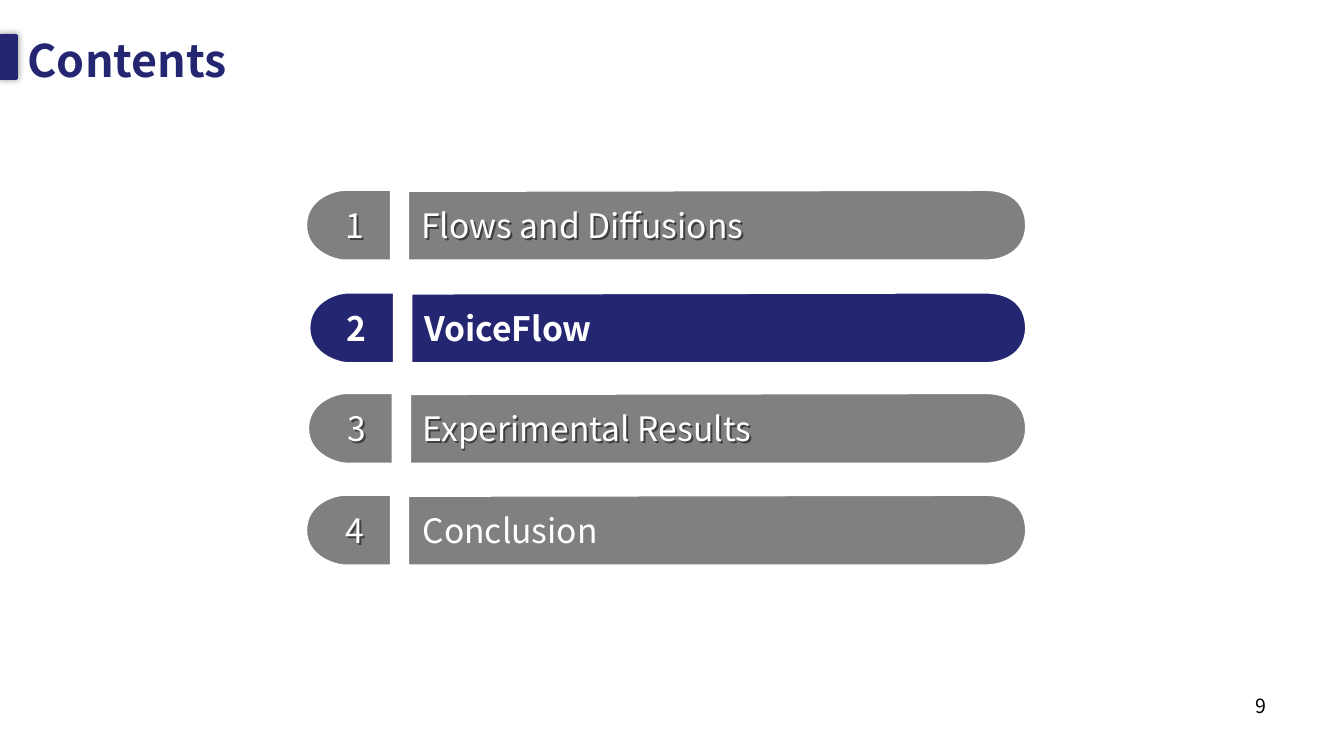
"""Contents slide with four agenda bars, the second one highlighted."""
from lxml import etree
from pptx import Presentation
from pptx.dml.color import RGBColor
from pptx.enum.shapes import MSO_SHAPE
from pptx.enum.text import MSO_ANCHOR, PP_ALIGN
from pptx.oxml.ns import qn
from pptx.util import Pt

NAVY = RGBColor(0x24, 0x26, 0x71)
GRAY = RGBColor(0x80, 0x80, 0x80)
WHITE = RGBColor(0xFF, 0xFF, 0xFF)
BLACK = RGBColor(0x00, 0x00, 0x00)
FONT = "Noto Sans CJK SC"
RIGHT, BAR_H = 733, 50.4


def add_shadow(shape, blur, dist, alpha):
    effects = etree.SubElement(shape._element.spPr, qn("a:effectLst"))
    shadow = etree.SubElement(effects, qn("a:outerShdw"), blurRad=str(Pt(blur)),
                              dist=str(Pt(dist)), dir="2700000", algn="tl", rotWithShape="0")
    color = etree.SubElement(shadow, qn("a:srgbClr"), val="000000")
    etree.SubElement(color, qn("a:alpha"), val=str(alpha * 1000))


def add_text(text, x, y, w, h, size=24, color=WHITE, bold=False, align=PP_ALIGN.LEFT,
             anchor=MSO_ANCHOR.MIDDLE, inset=2.2, shadow=False):
    box = s.shapes.add_textbox(Pt(x), Pt(y), Pt(w), Pt(h))
    if shadow:
        add_shadow(box, 0, 2, 50)
    tf = box.text_frame
    tf.word_wrap = True
    tf.vertical_anchor = anchor
    tf.margin_top = tf.margin_bottom = Pt(inset)
    p = tf.paragraphs[0]
    p.alignment = align
    r = p.add_run()
    r.text = text
    r.font.size, r.font.bold, r.font.name = Pt(size), bold, FONT
    r.font.color.rgb = color
    etree.SubElement(r.font._element, qn("a:ea"), typeface=FONT)


prs = Presentation()
prs.slide_width, prs.slide_height = Pt(960), Pt(540)
s = prs.slides.add_slide(prs.slide_layouts[6])

accent = s.shapes.add_shape(MSO_SHAPE.RECTANGLE, Pt(-0.5), Pt(25.2), Pt(12.4), Pt(31))
accent.fill.solid()
accent.fill.fore_color.rgb = NAVY
accent.line.color.rgb = NAVY
accent.line.width = Pt(2)
add_shadow(accent, 5, 0, 40)

add_text("Contents", 12.6, -9.4, 932.4, 104.4, size=32, color=NAVY, bold=True)
add_text("9", 687.8, 491.8, 223.9, 37.4, size=14, color=BLACK, align=PP_ALIGN.RIGHT,
         anchor=MSO_ANCHOR.TOP, inset=3.6)

rows = [
    ("Flows and Diffusions", 135.7, 218.7, 293.8, 316.1, True),
    ("VoiceFlow", 209, 221, 295.9, 421.2, False),
    ("Experimental Results", 280.8, 220.1, 294.8, 421.2, True),
    ("Conclusion", 353.5, 218.7, 294.8, 443.5, False),
]
for number, (label, top, left, label_x, label_w, label_shadow) in enumerate(rows, 1):
    active = label == "VoiceFlow"
    bar_left, cap_right = left + 72.9, left + 60.5
    bar = [(bar_left, 0.7), (bar_left, BAR_H),
           (bar_left + 14.5, BAR_H), (692, BAR_H), (704, BAR_H),
           (715, BAR_H), (732, 45.3), (RIGHT, 26),
           (RIGHT, 5.8), (718, 0), (704, 0),
           (690, 0), (bar_left + 14.5, 0.7), (bar_left, 0.7)]
    cap = [(cap_right, 0), (cap_right, BAR_H), (left + 27, BAR_H),
           (left + 22, BAR_H), (left, 45), (left, 25.3),
           (left, 6), (left + 20, 0), (left + 27, 0)]
    for outline, first_curve in ((bar, 1), (cap, 2)):
        vertices = [(Pt(x), Pt(top + y)) for x, y in outline]
        builder = s.shapes.build_freeform(*vertices[0])
        builder.add_line_segments(vertices[1:], close=True)
        sp = builder.convert_to_shape()
        segments = list(sp._element.iter(qn("a:lnTo")))
        controls = segments[first_curve:len(outline) - 1]
        for i in range(0, len(controls), 3):
            curve = etree.Element(qn("a:cubicBezTo"))
            controls[i].addprevious(curve)
            for segment in controls[i:i + 3]:
                curve.append(segment[0])
                segment.getparent().remove(segment)
        sp.shadow.inherit = False
        sp.fill.solid()
        sp.fill.fore_color.rgb = NAVY if active else GRAY
        sp.line.color.rgb = WHITE
        sp.line.width = Pt(1.5)
    add_text(str(number), left + (18.6 if active else 19.4), top + 7, 30.2, 36,
             bold=active, align=PP_ALIGN.CENTER, shadow=not active)
    add_text(label, label_x, top + 8.6, label_w, 33.1, bold=active, shadow=label_shadow)

prs.save("out.pptx")
